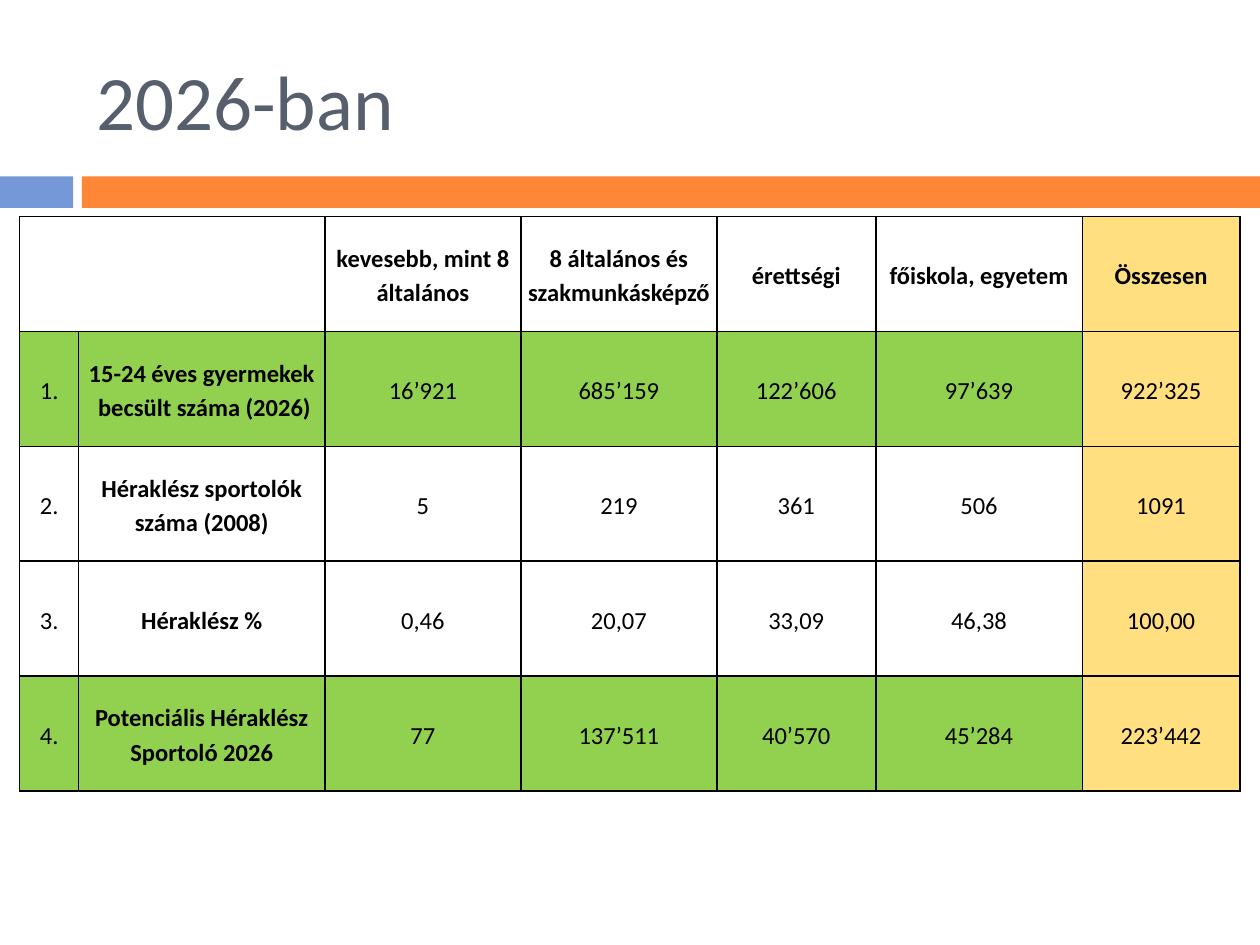
from copy import deepcopy

from lxml import etree
from pptx import Presentation
from pptx.dml.color import RGBColor
from pptx.enum.shapes import MSO_SHAPE
from pptx.enum.text import MSO_ANCHOR, PP_ALIGN
from pptx.oxml.ns import qn
from pptx.util import Pt

RECTANGLE = MSO_SHAPE.RECTANGLE
MIDDLE = MSO_ANCHOR.MIDDLE
LEFT, CENTER = PP_ALIGN.LEFT, PP_ALIGN.CENTER
FONT = "Calibri"
BLACK, SLATE, BLUE, ORANGE = "000000", "575F6D", "7598D9", "FE8637"
GREEN, AMBER = "92D050", "FFC000"
COLUMN_WIDTHS = [33.8, 140.6, 112.2, 111.8, 90.9, 118, 90.1]
HIGHLIGHTED_ROWS = (1, 4)
ROWS = [
    ["", "", "kevesebb, mint 8 általános", "8 általános és szakmunkásképző",
     "érettségi", "főiskola, egyetem", "Összesen"],
    ["1.", "15-24 éves gyermekek\n becsült száma (2026)",
     "16’921", "685’159", "122’606", "97’639", "922’325"],
    ["2.", "Héraklész sportolók száma (2008)", "5", "219", "361", "506", "1091"],
    ["3.", "Héraklész %", "0,46", "20,07", "33,09", "46,38", "100,00"],
    ["4.", "Potenciális Héraklész Sportoló 2026",
     "77", "137’511", "40’570", "45’284", "223’442"],
]


def set_color(target, color):
    """Give a font colour or a solid fill's colour its hex value."""
    target.rgb = RGBColor.from_string(color)


def write_text(text_frame, text, size, color=BLACK, bold=False, align=LEFT,
               line_spacing=None, space_after=0):
    """Write one formatted paragraph, line breaks included."""
    text_frame.word_wrap = True
    paragraph = text_frame.paragraphs[0]
    paragraph.text = text
    paragraph.alignment = align
    paragraph.line_spacing = line_spacing
    paragraph.space_after = Pt(space_after)
    for run in paragraph.runs:
        run.font.name = FONT
        run.font.size = Pt(size)
        run.font.bold = bold
        set_color(run.font.color, color)
    for line_break in paragraph._p.findall(qn("a:br")):
        line_break.append(deepcopy(paragraph.runs[0]._r.rPr))


def add_title(slide, left, top, width, height):
    """Add the slide's title, centred vertically in its box."""
    box = slide.shapes.add_textbox(Pt(left), Pt(top), Pt(width), Pt(height))
    box.text_frame.vertical_anchor = MIDDLE
    write_text(box.text_frame, "2026-ban", size=44, color=SLATE)


def add_band(slide, left, top, width, height, tab=41.8, gap=5):
    """Add the two-coloured band: a short tab, a gap and a long bar."""
    bar = tab + gap
    for offset, length, color in ((0, tab, BLUE), (bar, width - bar, ORANGE)):
        shape = slide.shapes.add_shape(
            RECTANGLE, Pt(left + offset), Pt(top), Pt(length), Pt(height))
        shape.shadow.inherit = False
        shape.fill.solid()
        set_color(shape.fill.fore_color, color)
        shape.line.fill.background()


def fill_cell(cell, row, column):
    """Fill totals in translucent amber and highlighted rows in green."""
    if column == len(COLUMN_WIDTHS) - 1:
        cell.fill.solid()
        set_color(cell.fill.fore_color, AMBER)
        color = cell._tc.tcPr.find(".//" + qn("a:srgbClr"))
        etree.SubElement(color, qn("a:alpha"), val="50000")
    elif row in HIGHLIGHTED_ROWS:
        cell.fill.solid()
        set_color(cell.fill.fore_color, GREEN)
    else:
        cell.fill.background()


def border_cell(cell, width=1):
    """Draw a black line on each side of a cell."""
    properties = cell._tc.get_or_add_tcPr()
    for index, side in enumerate(("a:lnL", "a:lnR", "a:lnT", "a:lnB")):
        line = etree.Element(qn(side), w=str(Pt(width)))
        fill = etree.SubElement(line, qn("a:solidFill"))
        etree.SubElement(fill, qn("a:srgbClr"), val=BLACK)
        properties.insert(index, line)


def add_data_table(slide, left, top, width, height):
    """Add the table of children and athletes by schooling."""
    table = slide.shapes.add_table(
        len(ROWS), len(COLUMN_WIDTHS), Pt(left), Pt(top), Pt(width), Pt(height)).table
    table.first_row = False
    table.horz_banding = False
    for column, column_width in zip(table.columns, COLUMN_WIDTHS):
        column.width = Pt(column_width)
    for row, values in enumerate(ROWS):
        table.rows[row].height = Pt(height / len(ROWS))
        for column, value in enumerate(values):
            cell = table.cell(row, column)
            cell.vertical_anchor = MIDDLE
            cell.margin_left = cell.margin_right = Pt(1.5)
            cell.margin_top = cell.margin_bottom = 0
            spaced = row in HIGHLIGHTED_ROWS and column > 1
            write_text(cell.text_frame, value, size=14, align=CENTER,
                       bold=row == 0 or column == 1, line_spacing=1.15,
                       space_after=10 if spaced else 0)
            fill_cell(cell, row, column)
            border_cell(cell)
    table.cell(0, 0).merge(table.cell(0, 1))


def main():
    """Build the slide and save it."""
    presentation = Presentation()
    presentation.slide_width, presentation.slide_height = Pt(720), Pt(540)
    slide = presentation.slides.add_slide(presentation.slide_layouts[6])
    add_band(slide, 0, 100.8, 720, 18)
    add_title(slide, 48, 18, 642, 78)
    add_data_table(slide, 11.2, 123.8, sum(COLUMN_WIDTHS), 328.2)
    presentation.save("out.pptx")


if __name__ == "__main__":
    main()
